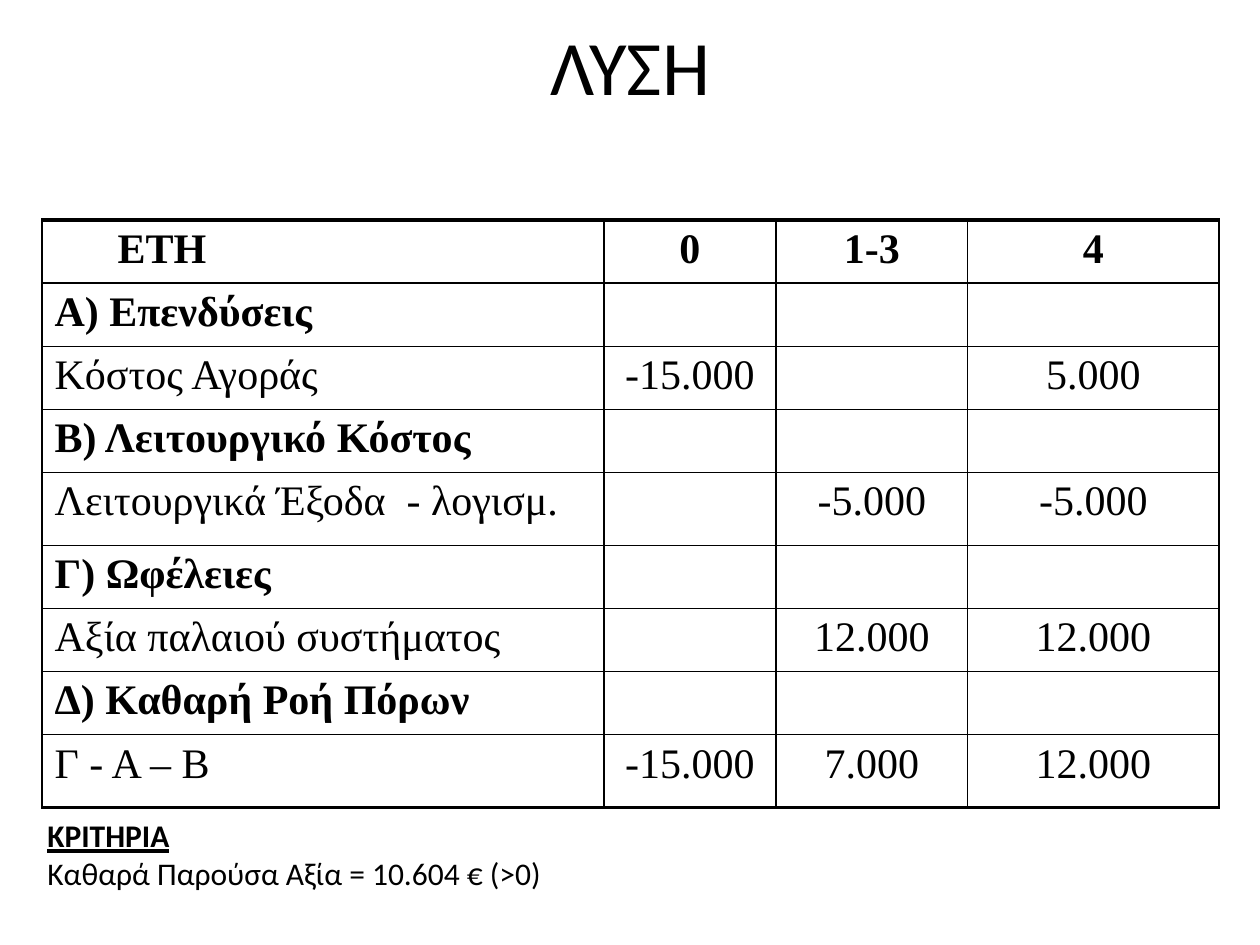
from dataclasses import dataclass

from lxml import etree
from pptx import Presentation
from pptx import util as u
from pptx.dml.color import RGBColor
from pptx.enum import text
from pptx.oxml import ns

PX = 914400 // 126
BLACK = RGBColor(0, 0, 0)
THIN, SIDE, THICK = 0.75, 1, 2
COL_WIDTHS = (562, 172, 192, 251)
HANG = 48
HEADER_INDENT = 63


@dataclass
class Row:
    label: str
    values: tuple[str, str, str] = ("", "", "")
    height: int = 63
    bold: bool = False
    header: bool = False


@dataclass
class Line:
    words: str
    font: dict


ROWS = [
    Row("ΕΤΗ", ("0", "1-3", "4"), 59, bold=True, header=True),
    Row("Α) Επενδύσεις", bold=True),
    Row("Κόστος Αγοράς", ("-15.000", "", "5.000")),
    Row("Β) Λειτουργικό Κόστος", bold=True),
    Row("Λειτουργικά Έξοδα  - λογισμ.", ("", "-5.000", "-5.000"), 73),
    Row("Γ) Ωφέλειες", bold=True),
    Row("Αξία παλαιού συστήματος", ("", "12.000", "12.000")),
    Row("Δ) Καθαρή Ροή Πόρων", bold=True),
    Row("Γ - Α – Β", ("-15.000", "7.000", "12.000"), 73),
]


def px(n: int) -> u.Emu:
    return u.Emu(n * PX)


def apply(obj, values: dict) -> None:
    for name, value in values.items():
        setattr(obj, name, value)


def write(p, words: str, name: str, size: int, **font) -> None:
    r = p.add_run()
    r.text = words
    r.font.color.rgb = BLACK
    apply(r.font, {"name": name, "size": u.Pt(size), **font})


def add_text(s, box: tuple[int, int, int, int], lines: list[Line], size: int,
             align, frame: dict) -> None:
    tf = s.shapes.add_textbox(*map(px, box)).text_frame
    apply(tf, {"word_wrap": True, **frame})
    for i, line in enumerate(lines):
        p = tf.add_paragraph() if i else tf.paragraphs[0]
        p.alignment = align
        write(p, line.words, "Calibri", size, **line.font)


def set_borders(cell, widths: dict[str, float]) -> None:
    tc_pr = cell._tc.get_or_add_tcPr()
    for side, width in widths.items():
        ln = etree.SubElement(tc_pr, ns.qn(f"a:ln{side}"), w=str(u.Pt(width)))
        fill = etree.SubElement(ln, ns.qn("a:solidFill"))
        etree.SubElement(fill, ns.qn("a:srgbClr"), val=str(BLACK))


def fill_cell(cell, words: str, row: Row, is_label: bool) -> None:
    if not words:
        return
    p = cell.text_frame.paragraphs[0]
    p.alignment = text.PP_ALIGN.LEFT if is_label else text.PP_ALIGN.CENTER
    left, indent = (HEADER_INDENT, 0) if is_label and row.header else (HANG, -HANG)
    p_pr = p._p.get_or_add_pPr()
    p_pr.set("marL", str(px(left)))
    p_pr.set("indent", str(px(indent)))
    write(p, words, "Times New Roman", 24, bold=row.bold)


def add_cash_flow_table(s, left: int, top: int) -> None:
    height = sum(row.height for row in ROWS)
    table = s.shapes.add_table(len(ROWS), len(COL_WIDTHS), px(left), px(top),
                               px(sum(COL_WIDTHS)), px(height)).table
    apply(table, {"first_row": False, "horz_banding": False})
    for column, width in zip(table.columns, COL_WIDTHS):
        column.width = px(width)
    last_row, last_col = len(ROWS) - 1, len(COL_WIDTHS) - 1
    for i, row in enumerate(ROWS):
        table.rows[i].height = px(row.height)
        for j, words in enumerate((row.label, *row.values)):
            cell = table.cell(i, j)
            fill_cell(cell, words, row, j == 0)
            set_borders(cell, {
                "L": SIDE if j == 0 else THIN,
                "R": SIDE if j == last_col else THIN,
                "T": THICK if i == 0 else SIDE if i == 1 else THIN,
                "B": THICK if i == last_row else SIDE if i == 0 else THIN,
            })
            cell.fill.background()


def main() -> None:
    prs = Presentation()
    prs.slide_width, prs.slide_height = px(1260), px(945)
    s = prs.slides.add_slide(prs.slide_layouts[6])
    add_text(s, (42, 32, 1177, 157), [Line("ΛΥΣΗ", {})], 44, text.PP_ALIGN.CENTER,
             {"vertical_anchor": text.MSO_ANCHOR.MIDDLE,
              "margin_top": 0, "margin_bottom": px(92)})
    add_cash_flow_table(s, 42, 220)
    add_text(s, (35, 810, 630, 89),
             [Line("ΚΡΙΤΗΡΙΑ", {"bold": True, "underline": True}),
              Line("Καθαρά Παρούσα Αξία = 10.604 € (>0)", {})],
             18, text.PP_ALIGN.LEFT,
             {"auto_size": text.MSO_AUTO_SIZE.SHAPE_TO_FIT_TEXT})
    prs.save("out.pptx")


if __name__ == "__main__":
    main()
